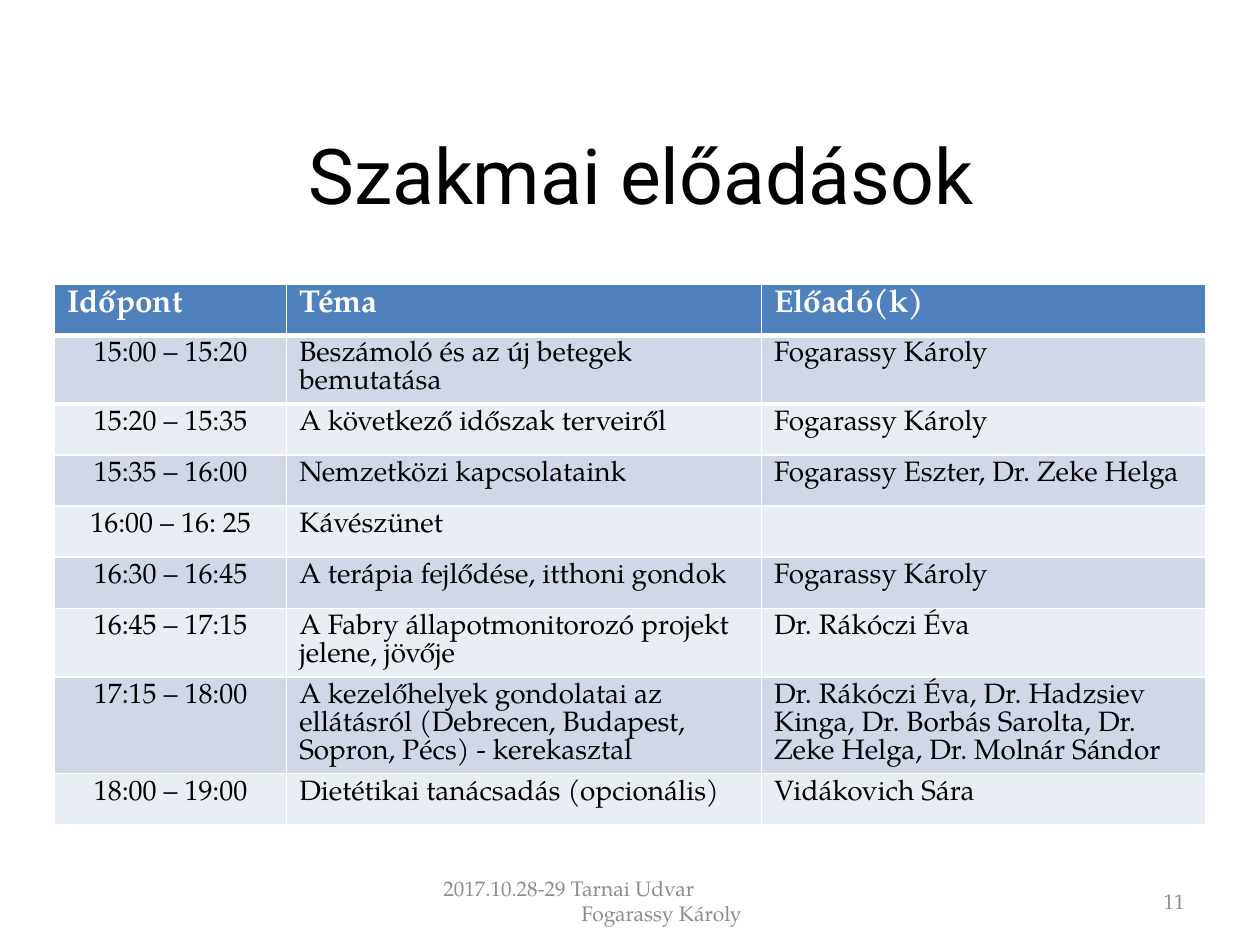
from dataclasses import dataclass
from typing import Any, Optional

import lxml.etree
import pptx
import pptx.dml.color
import pptx.enum.text
import pptx.oxml.ns
import pptx.util

Cm = pptx.util.Cm
Pt = pptx.util.Pt
Align = pptx.enum.text.PP_ALIGN
Anchor = pptx.enum.text.MSO_ANCHOR


@dataclass(frozen=True)
class TextStyle:
    size: int
    font: str
    color: str
    bold: bool = False
    line_height: Optional[int] = None


@dataclass(frozen=True)
class Theme:
    title: TextStyle = TextStyle(44, "Roboto", "000000")
    header: TextStyle = TextStyle(18, "TeX Gyre Pagella", "FFFFFF", True, 17)
    body: TextStyle = TextStyle(16, "TeX Gyre Pagella", "000000", False, 16)
    footer: TextStyle = TextStyle(12, "TeX Gyre Pagella", "8C8C8C")
    header_fill: str = "4F81BD"
    header_rule: str = "FFFFFF"
    header_rule_width: int = 3
    band_fills: tuple[str, str] = ("D0D8E8", "E9EDF4")


@dataclass(frozen=True)
class Line:
    text: str
    indent: float = 0


@dataclass(frozen=True)
class TextBox:
    lines: tuple[Line, ...]
    left: float
    top: float
    width: float
    height: float
    style: TextStyle
    align: Any


@dataclass(frozen=True)
class Talk:
    time: str
    topic: str
    speakers: str


THEME = Theme()
COLUMN_WIDTHS = (4.68, 9.57, 8.95)
ROW_HEIGHT = 1.03

HEADINGS = Talk("Időpont", "Téma", "Előadó(k)")
TALKS = (
    Talk("15:00 – 15:20", "Beszámoló és az új betegek bemutatása", "Fogarassy Károly"),
    Talk("15:20 – 15:35", "A következő időszak terveiről", "Fogarassy Károly"),
    Talk("15:35 – 16:00", "Nemzetközi kapcsolataink", "Fogarassy Eszter, Dr. Zeke Helga"),
    Talk("16:00 – 16: 25", "Kávészünet", ""),
    Talk("16:30 – 16:45", "A terápia fejlődése, itthoni gondok", "Fogarassy Károly"),
    Talk("16:45 – 17:15", "A Fabry állapotmonitorozó projekt jelene, jövője", "Dr. Rákóczi Éva"),
    Talk(
        "17:15 – 18:00",
        "A kezelőhelyek gondolatai az ellátásról (Debrecen, Budapest, Sopron, Pécs) - kerekasztal",
        "Dr. Rákóczi Éva, Dr. Hadzsiev Kinga, Dr. Borbás Sarolta, Dr. Zeke Helga, Dr. Molnár Sándor",
    ),
    Talk("18:00 – 19:00", "Dietétikai tanácsadás (opcionális)", "Vidákovich Sára"),
)

TEXT_BOXES = (
    TextBox((Line("Szakmai előadások"),), 1.5, 1.91, 22.86, 3.18, THEME.title, Align.CENTER),
    TextBox(
        (Line("2017.10.28-29 Tarnai Udvar"), Line("Fogarassy Károly", 2.78)),
        8.69, 17.65, 8.05, 1.02, THEME.footer, Align.LEFT,
    ),
    TextBox((Line("11"),), 18.21, 17.65, 5.92, 1.02, THEME.footer, Align.RIGHT),
)


def rgb(color: str) -> pptx.dml.color.RGBColor:
    return pptx.dml.color.RGBColor.from_string(color)


def write_paragraph(paragraph: Any, text: str, style: TextStyle, align: Any) -> None:
    paragraph.alignment = align
    if style.line_height:
        paragraph.line_spacing = Pt(style.line_height)
    run = paragraph.add_run()
    run.text = text
    font_format = {"size": Pt(style.size), "name": style.font, "bold": style.bold}
    for name, value in font_format.items():
        setattr(run.font, name, value)
    run.font.color.rgb = rgb(style.color)


def draw_text_box(slide: Any, box: TextBox) -> None:
    shape = slide.shapes.add_textbox(Cm(box.left), Cm(box.top), Cm(box.width), Cm(box.height))
    frame = shape.text_frame
    frame_format = {"word_wrap": True, "vertical_anchor": Anchor.MIDDLE}
    for name, value in frame_format.items():
        setattr(frame, name, value)
    for index, line in enumerate(box.lines):
        paragraph = frame.add_paragraph() if index else frame.paragraphs[0]
        write_paragraph(paragraph, line.text, box.style, box.align)
        if line.indent:
            paragraph._p.get_or_add_pPr().set("marL", str(Cm(line.indent)))


def add_rule(cell: Any, side: str, color: str, width: int) -> None:
    qn = pptx.oxml.ns.qn
    border = lxml.etree.Element(qn(f"a:{side}"), w=str(Pt(width)))
    fill = lxml.etree.SubElement(border, qn("a:solidFill"))
    lxml.etree.SubElement(fill, qn("a:srgbClr"), val=color)
    # Borders come before the fill in the cell properties
    cell._tc.get_or_add_tcPr().insert(0, border)


def draw_row(table: Any, row: int, talk: Talk) -> None:
    is_header = row == 0
    style = THEME.header if is_header else THEME.body
    fill = THEME.header_fill if is_header else THEME.band_fills[(row - 1) % 2]
    for column, text in enumerate((talk.time, talk.topic, talk.speakers)):
        cell = table.cell(row, column)
        cell.fill.solid()
        cell.fill.fore_color.rgb = rgb(fill)
        if row < 2:
            side = "lnB" if is_header else "lnT"
            add_rule(cell, side, THEME.header_rule, THEME.header_rule_width)
        align = Align.CENTER if column == 0 and not is_header else Align.LEFT
        write_paragraph(cell.text_frame.paragraphs[0], text, style, align)


def draw_schedule(slide: Any, talks: tuple[Talk, ...]) -> None:
    rows = (HEADINGS, *talks)
    table = slide.shapes.add_table(
        len(rows), len(COLUMN_WIDTHS), Cm(1.1), Cm(5.73),
        Cm(sum(COLUMN_WIDTHS)), Cm(ROW_HEIGHT * len(rows)),
    ).table
    for column, width in zip(table.columns, COLUMN_WIDTHS):
        column.width = Cm(width)
    for index, talk in enumerate(rows):
        draw_row(table, index, talk)


def main() -> None:
    presentation = pptx.Presentation()
    presentation.slide_width = Cm(25.4)
    presentation.slide_height = Cm(19.05)
    slide = presentation.slides.add_slide(presentation.slide_layouts[6])

    # Title, footer and page number
    for box in TEXT_BOXES:
        draw_text_box(slide, box)

    # Schedule of talks
    draw_schedule(slide, TALKS)

    presentation.save("out.pptx")


if __name__ == "__main__":
    main()
